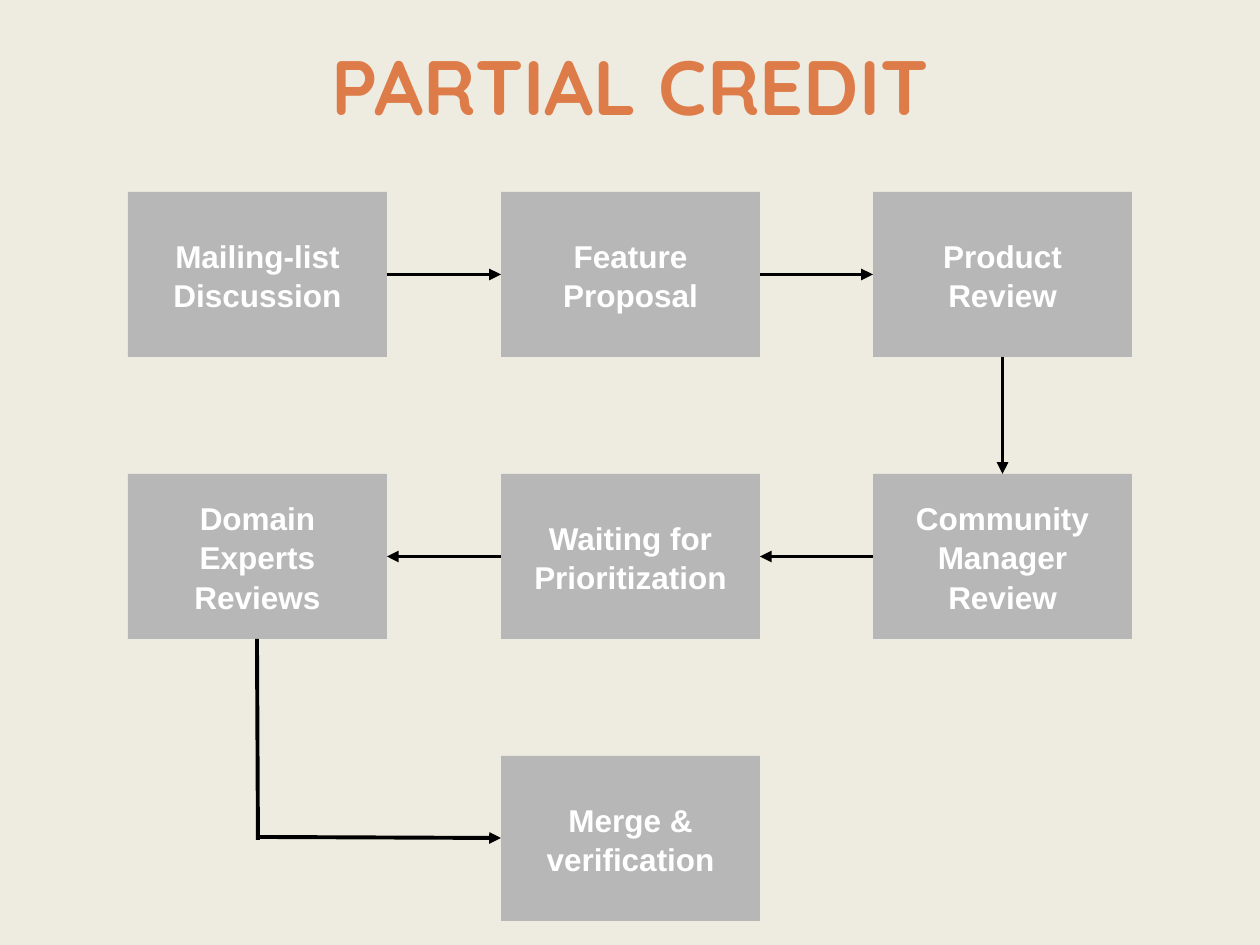
from pptx import Presentation
from pptx.dml.color import RGBColor
from pptx.enum.shapes import MSO_CONNECTOR as Connector, MSO_SHAPE as Shape
from pptx.enum.text import MSO_ANCHOR as Anchor, MSO_AUTO_SIZE as AutoSize, PP_ALIGN as Align
from pptx.oxml.ns import qn
from pptx.util import Inches, Pt
from lxml.etree import SubElement

PX_PER_INCH = 126
WIDTH, HEIGHT = 1260, 945
COLUMNS = (128, 501, 873)
ROW_TOP, ROW_STEP = 192, 282
BOX_WIDTH, BOX_HEIGHT = 259, 165
TOP, LEFT, BOTTOM, RIGHT = range(4)

STEPS = [
    ("Mailing-list Discussion", 0, 0),
    ("Feature Proposal", 1, 0),
    ("Product Review", 2, 0),
    ("Community Manager Review", 2, 1),
    ("Waiting for Prioritization", 1, 1),
    ("Domain Experts Reviews", 0, 1),
    ("Merge & verification", 1, 2),
]
LINKS = [(RIGHT, LEFT), (RIGHT, LEFT), (BOTTOM, TOP), (LEFT, RIGHT), (LEFT, RIGHT)]


def px(value):
    return Inches(value / PX_PER_INCH)


def color(value):
    return RGBColor.from_string(value)


def write(frame, text, font, size, fill, inset, spacing=1.0):
    frame.word_wrap = True
    frame.auto_size = AutoSize.NONE
    frame.vertical_anchor = Anchor.MIDDLE
    frame.margin_left = frame.margin_right = Inches(0.1)
    frame.margin_top = frame.margin_bottom = Inches(inset)
    paragraph = frame.paragraphs[0]
    paragraph.alignment = Align.CENTER
    paragraph.line_spacing = spacing
    run = paragraph.add_run()
    run.text = text
    run.font.name = font
    run.font.size = Pt(size)
    run.font.bold = True
    run.font.color.rgb = color(fill)


class FlowSlide:
    background = "EEECE1"
    box_fill = "B7B7B7"
    box_text = "FFFFFF"
    accent = "DD7C49"
    line_color = "000000"

    def __init__(self, presentation):
        self.slide = presentation.slides.add_slide(presentation.slide_layouts[5])
        fill = self.slide.background.fill
        fill.solid()
        fill.fore_color.rgb = color(self.background)

    def title(self, text, left, top, width, height):
        shape = self.slide.shapes.title
        shape.left, shape.top = px(left), px(top)
        shape.width, shape.height = px(width), px(height)
        write(shape.text_frame, text, font="Quicksand", size=44, fill=self.accent, inset=0.05)

    def box(self, text, column, row):
        shape = self.slide.shapes.add_shape(
            Shape.RECTANGLE, px(COLUMNS[column]), px(ROW_TOP + row * ROW_STEP),
            px(BOX_WIDTH), px(BOX_HEIGHT))
        shape.shadow.inherit = False
        shape.fill.solid()
        shape.fill.fore_color.rgb = color(self.box_fill)
        shape.line.fill.background()
        write(shape.text_frame, text, font="Arial", size=18, fill=self.box_text,
              inset=0.1, spacing=1.04)
        return shape

    def line(self, start=(0, 0), end=(0, 0), head=True):
        connector = self.slide.shapes.add_connector(
            Connector.STRAIGHT, *map(px, (*start, *end)))
        connector.line.color.rgb = color(self.line_color)
        connector.line.width = Pt(2.25)
        if head:
            SubElement(connector.line._get_or_add_ln(), qn("a:tailEnd"),
                       type="triangle", w="med", len="med")
        SubElement(connector._element.spPr, qn("a:effectLst"))
        return connector

    def link(self, source, source_side, target, target_side):
        connector = self.line()
        connector.begin_connect(source, source_side)
        connector.end_connect(target, target_side)


def main():
    presentation = Presentation()
    presentation.slide_width, presentation.slide_height = px(WIDTH), px(HEIGHT)
    flow = FlowSlide(presentation)
    flow.title("PARTIAL CREDIT", 63, 6, 1134, 158)
    boxes = [flow.box(*step) for step in STEPS]
    for source, target, (source_side, target_side) in zip(boxes, boxes[1:], LINKS):
        flow.link(source, source_side, target, target_side)
    flow.line((257, 639), (258, 840), head=False)
    flow.line((258, 837), (501, 838))
    presentation.save("out.pptx")


if __name__ == "__main__":
    main()
